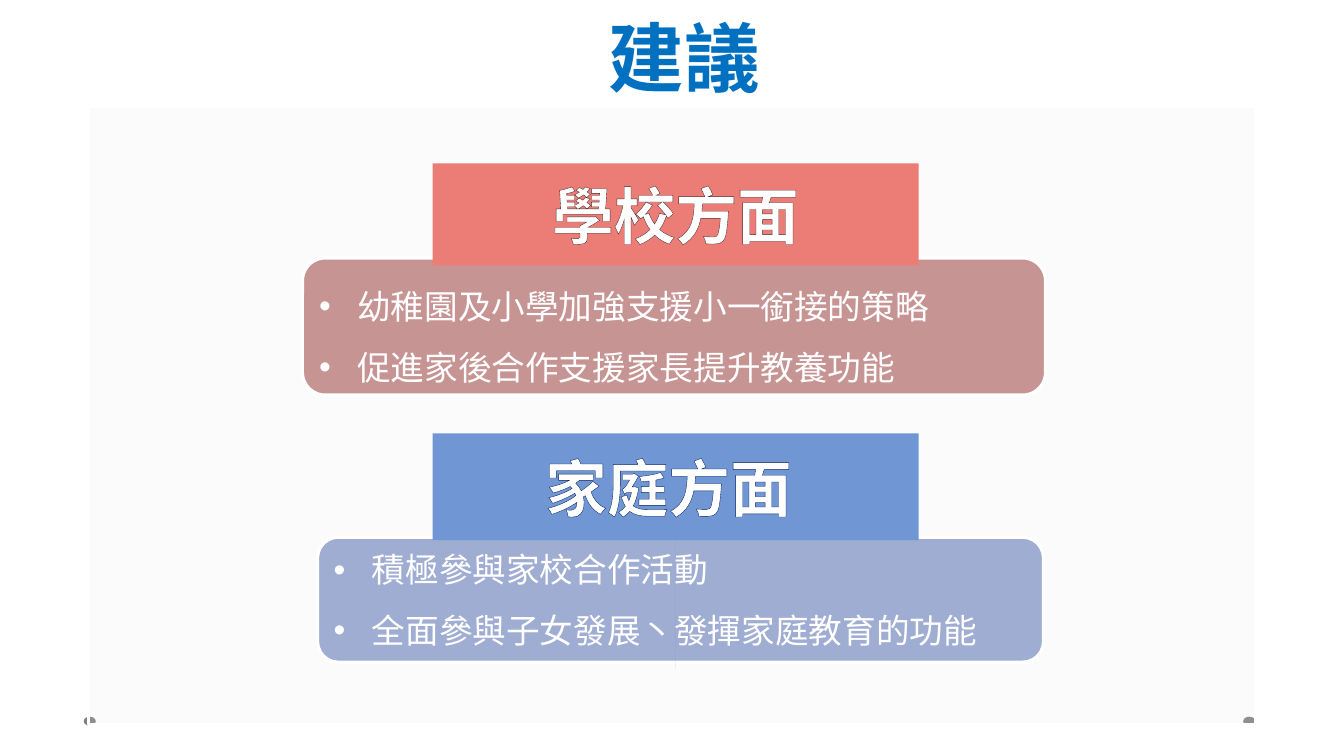
import pptx
import pptx.util
import pptx.dml.color
import pptx.enum.shapes
import pptx.enum.text
import pptx.oxml
import pptx.oxml.ns

Inches, Pt = pptx.util.Inches, pptx.util.Pt
SHAPE = pptx.enum.shapes.MSO_SHAPE
ALIGN = pptx.enum.text.PP_ALIGN
ANCHOR = pptx.enum.text.MSO_ANCHOR
qn = pptx.oxml.ns.qn

# Content
TITLE = "建議"
SECTIONS = [
    {"heading": "學校方面", "color": "school", "outline": "school_edge",
     "callout": (1.62, 2.13), "adjust": (0, 0, 0.26, 0.476),
     "list_color": "school_list", "list_box": (3, 2.56, 7.37, 1.36),
     "items": [("幼稚園及小學加強支援小一銜接的策略", 1.5),
               ("促進家後合作支援家長提升教養功能", 1.5)]},
    {"heading": "家庭方面 ", "color": "family", "outline": "family_edge",
     "callout": (4.3, 2.33), "adjust": (0.278, 0, 0.25, 0.455),
     "list_color": "family_list", "list_box": (3.15, 5.33, 7.2, 1.24),
     "items": [("積極參與家校合作活動", 1.0),
               ("全面參與子女發展丶發揮家庭教育的功能", 1.5)]},
]
COLORS = {
    "white": "FFFFFF", "title": "0070C0", "panel": "E8E8E8", "dot": "808080",
    "school": "EB7C76", "school_list": "C79494", "school_edge": "4E2929",
    "family": "7097D3", "family_list": "A0ADD2", "family_edge": "002060",
}

# Layout, in inches
SLIDE = (13.33, 7.5)
PANEL = (0.88, 1.06, 11.57, 6.13)
TITLE_BOX = (5.68, 0, 2.22, 1.06)
CALLOUT_LEFT, CALLOUT_WIDTH = 4.29, 4.82
DOT_LEFTS, DOT_TOP, DOT_SIZE = (12.33, 0.83), 7.11, (0.12, 0.09)
HANGING = Inches(0.38)


def rgb(name):
    return pptx.dml.color.RGBColor.from_string(COLORS[name])


def element(tag, parent, **attributes):
    child = parent.makeelement(qn(tag), attributes)
    parent.append(child)
    return child


def paint(sp, color, alpha=None):
    sp.fill.solid()
    sp.fill.fore_color.rgb = rgb(color)
    if alpha is not None:
        fill = sp._element.spPr.find(qn("a:solidFill"))
        element("a:alpha", fill[0], val=str(alpha * 1000))


def add_box(s, kind, box, color, alpha=None, border=False):
    sp = s.shapes.add_shape(kind, *map(Inches, box))
    sp.shadow.inherit = False
    paint(sp, color, alpha)
    if border:
        sp.line.color.rgb = rgb("white")
        sp.line.width = Pt(2.25)
    else:
        sp.line.fill.background()
    return sp


def style(r, size, color, font, bold=False):
    r.font.size, r.font.name, r.font.bold = Pt(size), font, bold
    r.font.color.rgb = rgb(color)


def outline_text(r, color):
    rPr = r.font._element if hasattr(r.font, "_element") else r._r.get_or_add_rPr()
    ln = rPr.makeelement(qn("a:ln"), {"w": str(Pt(1.5))})
    element("a:srgbClr", element("a:solidFill", ln), val=COLORS[color])
    rPr.insert(0, ln)


def add_list(s, section):
    sp = add_box(s, SHAPE.ROUNDED_RECTANGLE, section["list_box"],
                 section["list_color"], border=True)
    tf = sp.text_frame
    tf.word_wrap = True
    tf.vertical_anchor = ANCHOR.MIDDLE
    tf.text = "\n".join(text for text, _ in section["items"])
    for p, (_, spacing) in zip(tf.paragraphs, section["items"]):
        p.alignment = ALIGN.LEFT
        p.line_spacing = spacing
        pPr = p._p.get_or_add_pPr()
        pPr.set("marL", str(HANGING))
        pPr.set("indent", str(-HANGING))
        element("a:buFont", pPr, typeface="Arial")
        element("a:buChar", pPr, char="•")
        style(p.runs[0], 24, "white", "Arial")


def add_heading(s, section):
    top, height = section["callout"]
    sp = add_box(s, SHAPE.DOWN_ARROW_CALLOUT,
                 (CALLOUT_LEFT, top, CALLOUT_WIDTH, height), section["color"])
    for i, value in enumerate(section["adjust"]):
        sp.adjustments[i] = value
    tf = sp.text_frame
    tf.word_wrap = True
    tf.vertical_anchor = ANCHOR.MIDDLE
    p = tf.paragraphs[0]
    p.text = section["heading"]
    p.alignment = ALIGN.CENTER
    style(p.runs[0], 44, "white", "Arial", bold=True)
    outline_text(p.runs[0], section["outline"])


def add_title(s):
    sp = s.shapes.title
    sp.left, sp.top, sp.width, sp.height = map(Inches, TITLE_BOX)
    paint(sp, "white", 70)
    tf = sp.text_frame
    tf.text = TITLE
    tf.word_wrap = True
    tf.auto_size = pptx.enum.text.MSO_AUTO_SIZE.NONE
    tf.vertical_anchor = ANCHOR.BOTTOM
    p = tf.paragraphs[0]
    p.alignment = ALIGN.CENTER
    p.line_spacing = Pt(58)
    style(p.runs[0], 54, "title", "TeX Gyre Pagella", bold=True)


def main():
    prs = pptx.Presentation()
    prs.slide_width, prs.slide_height = map(Inches, SLIDE)
    s = prs.slides.add_slide(prs.slide_layouts[5])

    # Backdrop
    for left in DOT_LEFTS:
        add_box(s, SHAPE.OVAL, (left, DOT_TOP, *DOT_SIZE), "dot")
    add_box(s, SHAPE.RECTANGLE, PANEL, "panel", alpha=15, border=True)

    # Lists sit behind the headings
    for section in reversed(SECTIONS):
        add_list(s, section)
    add_title(s)
    s.shapes._spTree.append(s.shapes.title._element)
    for section in SECTIONS:
        add_heading(s, section)

    prs.save("out.pptx")


if __name__ == "__main__":
    main()
